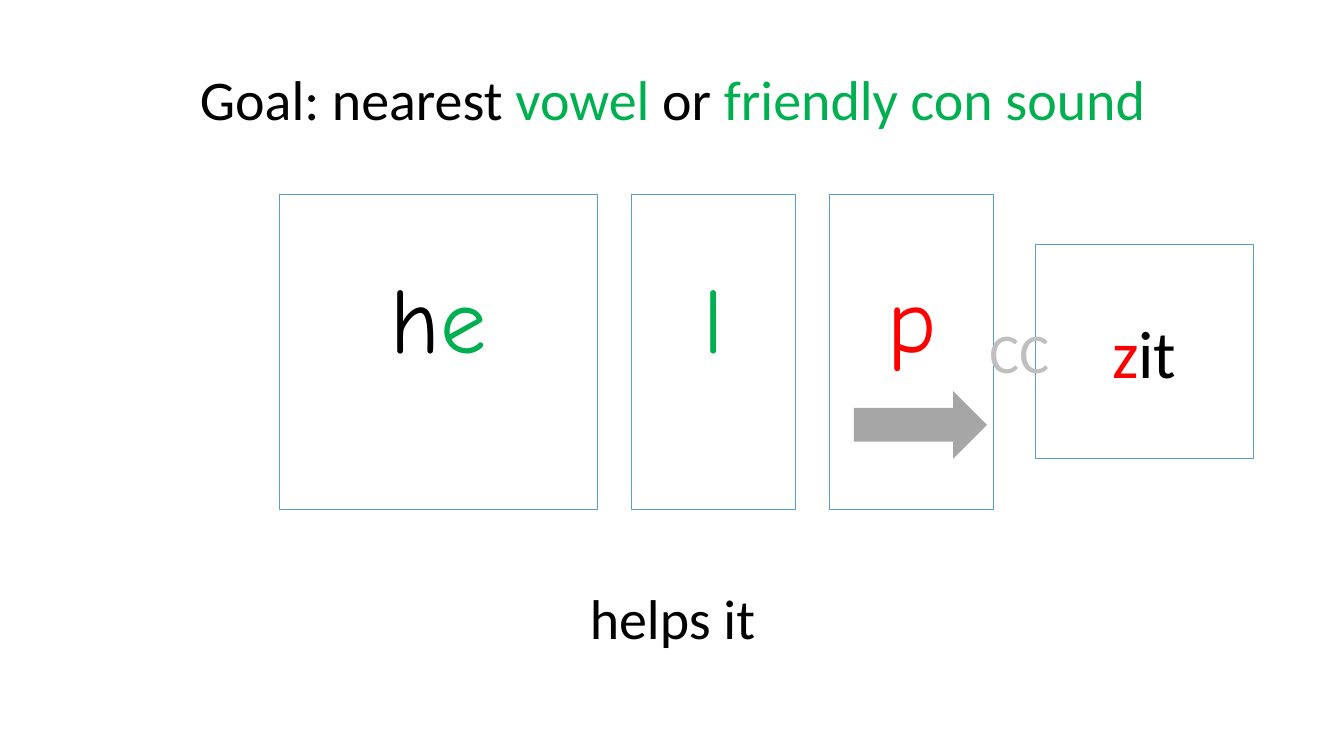
from dataclasses import dataclass
from typing import Any

from pptx import Presentation
from pptx.dml.color import RGBColor
from pptx.enum.shapes import MSO_SHAPE
from pptx.enum.text import MSO_ANCHOR, MSO_AUTO_SIZE, PP_ALIGN
from pptx.util import Inches, Pt

BLACK = RGBColor(0x00, 0x00, 0x00)
GREEN = RGBColor(0x00, 0xB0, 0x50)
RED = RGBColor(0xFF, 0x00, 0x00)
BLUE = RGBColor(0x5B, 0x9B, 0xD5)
SILVER = RGBColor(0xBF, 0xBF, 0xBF)
GRAY = RGBColor(0xA6, 0xA6, 0xA6)

SLIDE_WIDTH = Inches(13.33)
SLIDE_HEIGHT = Inches(7.5)
CARD_GAP = 2.5
LINE_HEIGHT = 10.27
CARD_INSET = Inches(0.66)
TEXT_INSET = Inches(0.05)


@dataclass(frozen=True)
class Frame:
    """Shares of the slide's size, in percent."""

    left: float
    top: float
    width: float
    height: float

    def lengths(self) -> dict[str, int]:
        return {
            "left": round(SLIDE_WIDTH * self.left / 100),
            "top": round(SLIDE_HEIGHT * self.top / 100),
            "width": round(SLIDE_WIDTH * self.width / 100),
            "height": round(SLIDE_HEIGHT * self.height / 100),
        }


@dataclass(frozen=True)
class Span:
    text: str
    color: RGBColor


@dataclass(frozen=True)
class Label:
    spans: tuple[Span, ...]
    size: int = 40
    font: str = "Calibri"


@dataclass(frozen=True)
class LetterCard:
    width: float
    spans: tuple[Span, ...]


GOAL = Label((
    Span("Goal: nearest ", BLACK),
    Span("vowel", GREEN),
    Span(" or ", BLACK),
    Span("friendly con sound", GREEN),
))
LETTER_CARDS = (
    LetterCard(23.71, (Span("h", BLACK), Span("e", GREEN))),
    LetterCard(12.23, (Span("l", GREEN),)),
    LetterCard(12.23, (Span("p", RED),)),
)
ENDING = Label((Span("z", RED), Span("it", BLACK)), 48)
CLUSTER = Label((Span("CC", SILVER),))
ANSWER = Label((Span("helps it", BLACK),))


def apply(target: Any, values: dict[str, Any]) -> None:
    for name, value in values.items():
        setattr(target, name, value)


def write(box: Any, label: Label, top_inset: int = TEXT_INSET) -> None:
    apply(box.text_frame, {
        "word_wrap": True,
        "auto_size": MSO_AUTO_SIZE.NONE,
        "vertical_anchor": MSO_ANCHOR.TOP,
        "margin_top": top_inset,
        "margin_bottom": TEXT_INSET,
    })
    para = box.text_frame.paragraphs[0]
    para.alignment = PP_ALIGN.CENTER
    for span in label.spans:
        run = para.add_run()
        run.text = span.text
        apply(run.font, {"size": Pt(label.size), "name": label.font})
        run.font.color.rgb = span.color


def add_card(page: Any, frame: Frame, label: Label) -> None:
    card = page.shapes.add_shape(MSO_SHAPE.RECTANGLE, **frame.lengths())
    card.shadow.inherit = False
    card.fill.background()
    card.line.color.rgb = BLUE
    card.line.width = Pt(0.75)
    write(card, label, CARD_INSET)


def add_label(page: Any, frame: Frame, label: Label) -> None:
    write(page.shapes.add_textbox(**frame.lengths()), label)


def add_arrow(page: Any, frame: Frame) -> None:
    arrow = page.shapes.add_shape(MSO_SHAPE.RIGHT_ARROW, **frame.lengths())
    arrow.shadow.inherit = False
    arrow.fill.solid()
    arrow.fill.fore_color.rgb = GRAY
    arrow.line.fill.background()


def main() -> None:
    deck = Presentation()
    apply(deck, {"slide_width": SLIDE_WIDTH, "slide_height": SLIDE_HEIGHT})
    page = deck.slides.add_slide(deck.slide_layouts.get_by_name("Title Only"))

    title = page.shapes.title
    apply(title, Frame(5.33, 7.87, 89.42, LINE_HEIGHT).lengths())
    write(title, GOAL)

    left = 20.78
    for card in LETTER_CARDS:
        frame = Frame(left, 25.73, card.width, 41.73)
        add_card(page, frame, Label(card.spans, 66, "Comic Neue"))
        left += card.width + CARD_GAP

    add_card(page, Frame(77.04, 32.4, 16.2, 28.27), ENDING)
    add_label(page, Frame(68.34, 41.33, 15, LINE_HEIGHT), CLUSTER)
    add_label(page, Frame(36.68, 76.53, 26.71, LINE_HEIGHT), ANSWER)
    add_arrow(page, Frame(63.54, 51.73, 9.9, 8.93))
    deck.save("out.pptx")


if __name__ == "__main__":
    main()
